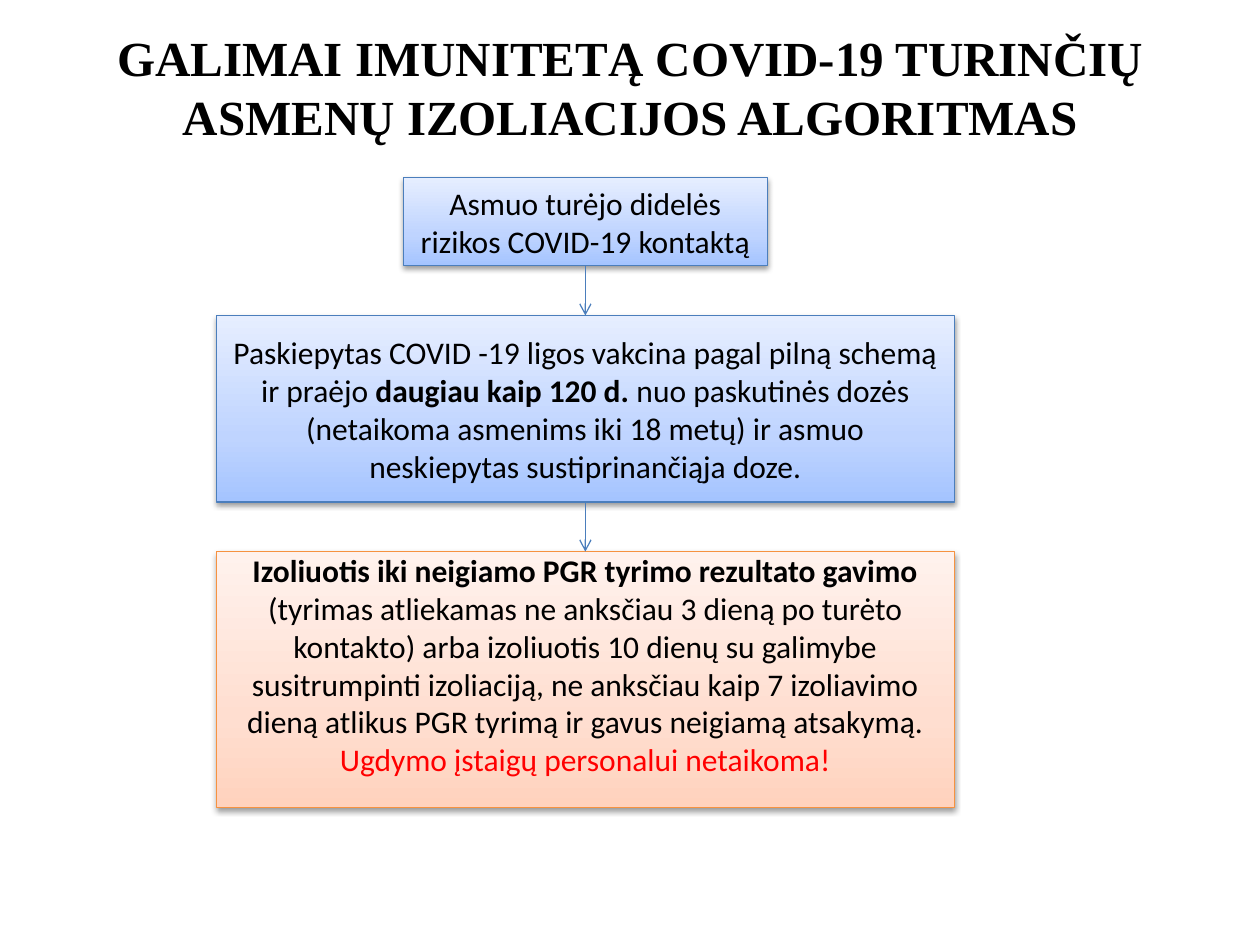
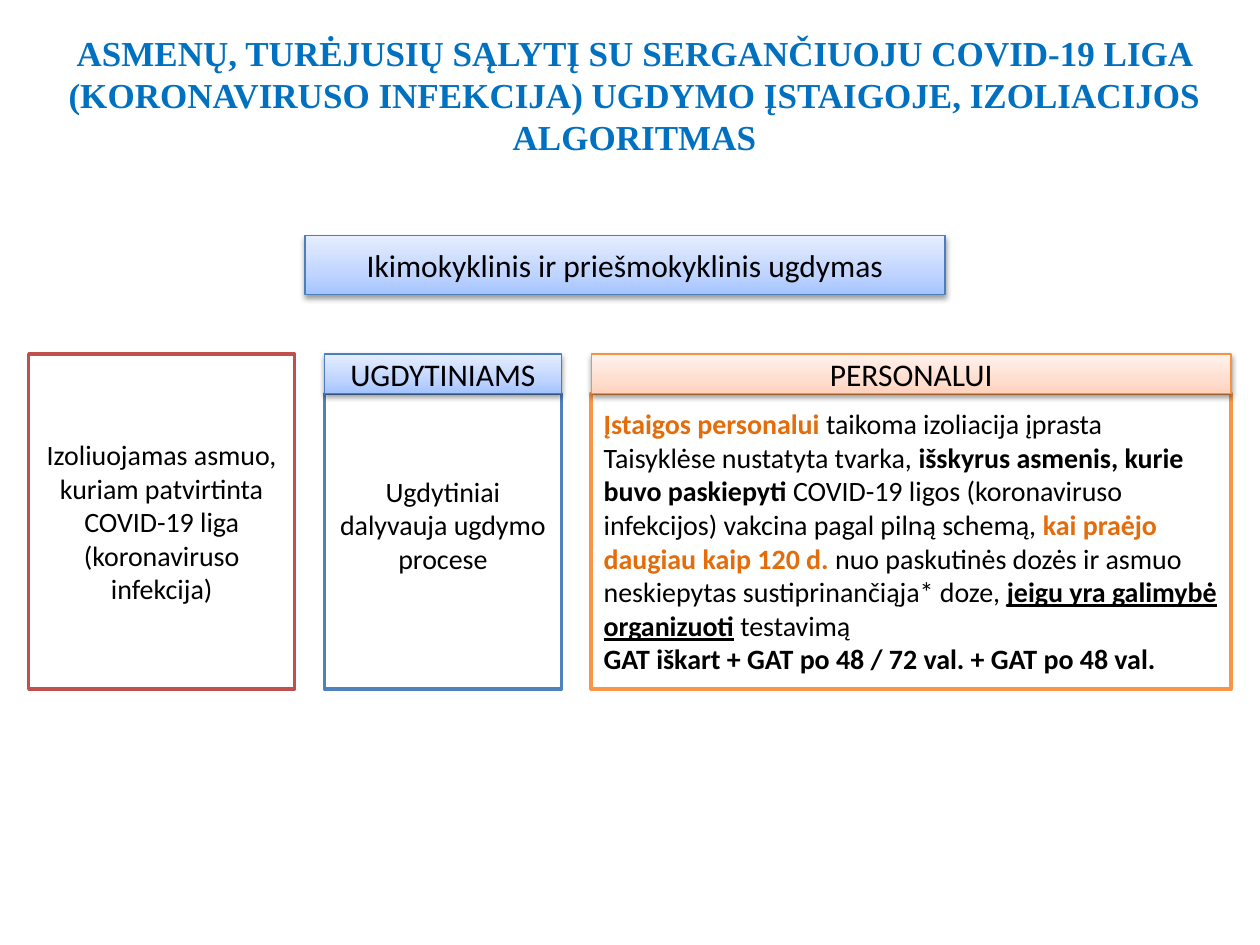
from copy import deepcopy
from dataclasses import dataclass

from lxml.etree import SubElement
from pptx import Presentation
from pptx.dml.color import RGBColor
from pptx.enum.shapes import MSO_CONNECTOR, MSO_SHAPE
from pptx.enum.text import MSO_ANCHOR, MSO_AUTO_SIZE, PP_ALIGN
from pptx.oxml.ns import qn
from pptx.util import Cm, Pt


@dataclass(frozen=True)
class Theme:
    """Colours, fonts and type sizes shared by both slides."""
    text: str = "000000"
    alert: str = "FF0000"
    accent: str = "E46C0A"
    white: str = "FFFFFF"
    title_blue: str = "0070C0"
    red: str = "C0504D"
    blue: str = "4F81BD"
    orange: str = "F79646"
    title_font: str = "Times New Roman"
    body_font: str = "Calibri"
    box_size: int = 18
    detail_size: int = 16
    thin: float = 0.75
    thick: float = 2


THEME = Theme()
BANDS = {
    "blue": ("4B7EBC", ((0, "A4C4FF"), (0.35, "BFD4FF"), (1, "E6EEFF"))),
    "orange": ("F69240", ((0, "FFD2BD"), (0.35, "FFDED0"), (1, "FFF2ED"))),
}
RUN_STYLES = {
    "plain": (THEME.text, False, False),
    "bold": (THEME.text, True, False),
    "underlined": (THEME.text, True, True),
    "accent": (THEME.accent, True, False),
    "alert": (THEME.alert, False, False),
}

FLOW_TITLE = "GALIMAI IMUNITETĄ COVID-19 TURINČIŲ ASMENŲ IZOLIACIJOS ALGORITMAS"
FLOW_AXIS, FLOW_TOP, FLOW_GAP = 11.8, 3.58, 1
FLOW_STEPS = [
    {"width": 7.34, "height": 1.78, "band": "blue", "insets": (0.13, 0.13),
     "paragraphs": [[("Asmuo turėjo didelės rizikos COVID-19 kontaktą", "plain")]]},
    {"width": 14.88, "height": 3.76, "band": "blue", "insets": (0.13, 0.13),
     "paragraphs": [[
         ("Paskiepytas COVID -19 ligos vakcina pagal pilną schemą ir praėjo ", "plain"),
         ("daugiau kaip 120 d.", "bold"),
         (" nuo paskutinės dozės (netaikoma asmenims iki 18 metų) ir asmuo "
          "neskiepytas sustiprinančiąja doze.", "plain")]]},
    {"width": 14.88, "height": 5.16, "band": "orange", "insets": (0, 0.6),
     "paragraphs": [
         [("Izoliuotis iki neigiamo PGR tyrimo rezultato gavimo", "bold")],
         [("(tyrimas atliekamas ne anksčiau 3 dieną po turėto kontakto) arba izoliuotis "
           "10 dienų su galimybe susitrumpinti izoliaciją, ne anksčiau kaip 7 izoliavimo "
           "dieną atlikus PGR tyrimą ir gavus neigiamą atsakymą.", "plain")],
         [("Ugdymo įstaigų personalui netaikoma!", "alert")]]},
]

SCHOOL_TITLE = ("ASMENŲ, TURĖJUSIŲ SĄLYTĮ SU SERGANČIUOJU COVID-19 LIGA (KORONAVIRUSO "
                "INFEKCIJA) UGDYMO ĮSTAIGOJE, IZOLIACIJOS ALGORITMAS")
SCHOOL_STAGE = "Ikimokyklinis ir priešmokyklinis ugdymas"
STAGE_BOX = (6.15, 4.75, 12.9, 1.19)
COLUMNS_LEFT, COLUMNS_TOP, COLUMNS_GAP = 0.58, 7.14, 0.6
COLUMNS_HEIGHT, HEADER_HEIGHT = 6.75, 0.79
COLUMNS = [
    {"width": 5.36, "line": THEME.red, "header": None, "band": None,
     "align": PP_ALIGN.CENTER, "insets": (0.13, 0.13),
     "paragraphs": [[("Izoliuojamas asmuo, kuriam patvirtinta COVID-19 liga "
                      "(koronaviruso infekcija)", "plain")]]},
    {"width": 4.78, "line": THEME.blue, "header": "UGDYTINIAMS", "band": "blue",
     "align": PP_ALIGN.CENTER, "insets": (0.13, 0.8),
     "paragraphs": [[("Ugdytiniai dalyvauja ugdymo procese", "plain")]]},
    {"width": 12.9, "line": THEME.orange, "header": "PERSONALUI", "band": "orange",
     "align": PP_ALIGN.LEFT, "insets": (0.13, 0.13),
     "paragraphs": [
         [("Įstaigos personalui ", "accent"),
          ("taikoma izoliacija įprasta Taisyklėse nustatyta tvarka, ", "plain"),
          ("išskyrus asmenis, kurie buvo paskiepyti ", "bold"),
          ("COVID-19 ligos (koronaviruso infekcijos) vakcina pagal pilną schemą, ", "plain"),
          ("kai praėjo daugiau kaip 120 d.", "accent"),
          (" nuo paskutinės dozės ir asmuo neskiepytas sustiprinančiąja* doze, ", "plain"),
          ("jeigu yra galimybė organizuoti", "underlined"),
          (" testavimą", "plain")],
         [("GAT iškart + GAT po 48 / 72 val. + GAT po 48 val.", "bold")]]},
]


def color(value):
    """Turn a hex string into a colour."""
    return RGBColor.from_string(value)


def add_run(paragraph, text, font_name, size, style):
    """Add one formatted run."""
    run = paragraph.add_run()
    run.text = text
    font = run.font
    font.name, font.size = font_name, Pt(size)
    value, font.bold, font.underline = style
    font.color.rgb = color(value)


def add_titled_slide(presentation, title, box, size, value, bottom_inset):
    """Add a title-only slide with its title placed and formatted."""
    slide = presentation.slides.add_slide(presentation.slide_layouts[5])
    placeholder = slide.shapes.title
    placeholder.left, placeholder.top, placeholder.width, placeholder.height = map(Cm, box)
    frame = placeholder.text_frame
    frame.auto_size = MSO_AUTO_SIZE.NONE
    frame.vertical_anchor = MSO_ANCHOR.MIDDLE
    frame.margin_bottom = Cm(bottom_inset)
    paragraph = frame.paragraphs[0]
    paragraph.alignment = PP_ALIGN.CENTER
    add_run(paragraph, title, THEME.title_font, size, (value, True, False))
    return slide


def add_box(slide, box, paragraphs, size, line, line_width,
            align=PP_ALIGN.CENTER, insets=(0.13, 0.13)):
    """Add a white rectangle with formatted text."""
    shape = slide.shapes.add_shape(MSO_SHAPE.RECTANGLE, *map(Cm, box))
    shape.shadow.inherit = False
    shape.fill.solid()
    shape.fill.fore_color.rgb = color(THEME.white)
    shape.line.color.rgb = color(line)
    shape.line.width = Pt(line_width)
    frame = shape.text_frame
    frame.word_wrap = True
    frame.vertical_anchor = MSO_ANCHOR.MIDDLE
    frame.margin_top, frame.margin_bottom = map(Cm, insets)
    for index, runs in enumerate(paragraphs):
        paragraph = frame.add_paragraph() if index else frame.paragraphs[0]
        paragraph.alignment = align
        for text, style in runs:
            add_run(paragraph, text, THEME.body_font, size, RUN_STYLES[style])
    return shape


def add_band(slide, box, paragraphs, band, insets=(0.13, 0.13)):
    """Add a rectangle with a three-stop gradient and a soft shadow."""
    line, stops = BANDS[band]
    shape = add_box(slide, box, paragraphs, THEME.box_size, line, THEME.thin, insets=insets)
    shape.fill.gradient()
    shape.fill.gradient_angle = 90
    properties = shape.element.spPr
    stop_list = properties.find(qn("a:gradFill")).find(qn("a:gsLst"))
    stop_list.append(deepcopy(stop_list[0]))
    for stop, (position, value) in zip(shape.fill.gradient_stops, stops):
        stop.position = position
        stop.color.rgb = color(value)
    shadow = SubElement(properties.find(qn("a:effectLst")), qn("a:outerShdw"),
                        blurRad="40000", dist="20000", dir="5400000", rotWithShape="0")
    shade = SubElement(shadow, qn("a:srgbClr"), val=THEME.text)
    SubElement(shade, qn("a:alpha"), val="38000")
    return shape


def add_arrow(slide, upper, lower):
    """Join two boxes with a downward arrow."""
    arrow = slide.shapes.add_connector(MSO_CONNECTOR.STRAIGHT, 0, 0, 0, 0)
    arrow.begin_connect(upper, 2)
    arrow.end_connect(lower, 0)
    arrow.line.color.rgb = color(BANDS["blue"][0])
    arrow.line.width = Pt(THEME.thin)
    properties = arrow.element.spPr
    SubElement(properties.find(qn("a:ln")), qn("a:tailEnd"), type="arrow")
    SubElement(properties, qn("a:effectLst"))


def build_flow_slide(presentation):
    """Build the vertical isolation flow."""
    slide = add_titled_slide(presentation, FLOW_TITLE, (1.27, 0.76, 22.86, 3.18),
                             28, THEME.text, 1.35)
    top, shapes = FLOW_TOP, []
    for step in FLOW_STEPS:
        box = (FLOW_AXIS - step["width"] / 2, top, step["width"], step["height"])
        shapes.append(add_band(slide, box, step["paragraphs"], step["band"], step["insets"]))
        top += step["height"] + FLOW_GAP
    for upper, lower in zip(shapes, shapes[1:]):
        add_arrow(slide, upper, lower)


def build_school_slide(presentation):
    """Build the three columns for schools."""
    slide = add_titled_slide(presentation, SCHOOL_TITLE, (0.79, 0.41, 24, 3),
                             20, THEME.title_blue, 0.13)
    add_band(slide, STAGE_BOX, [[(SCHOOL_STAGE, "plain")]], "blue")
    left = COLUMNS_LEFT
    for column in COLUMNS:
        width = column["width"]
        header_height = HEADER_HEIGHT if column["header"] else 0
        body = (left, COLUMNS_TOP + header_height, width, COLUMNS_HEIGHT - header_height)
        add_box(slide, body, column["paragraphs"], THEME.detail_size, column["line"],
                THEME.thick, column["align"], column["insets"])
        if column["header"]:
            add_band(slide, (left, COLUMNS_TOP, width, header_height),
                     [[(column["header"], "plain")]], column["band"])
        left += width + COLUMNS_GAP


def main():
    """Build and save the presentation."""
    presentation = Presentation()
    presentation.slide_width, presentation.slide_height = Cm(25.4), Cm(19.05)
    build_flow_slide(presentation)
    build_school_slide(presentation)
    presentation.save("out.pptx")


if __name__ == "__main__":
    main()
